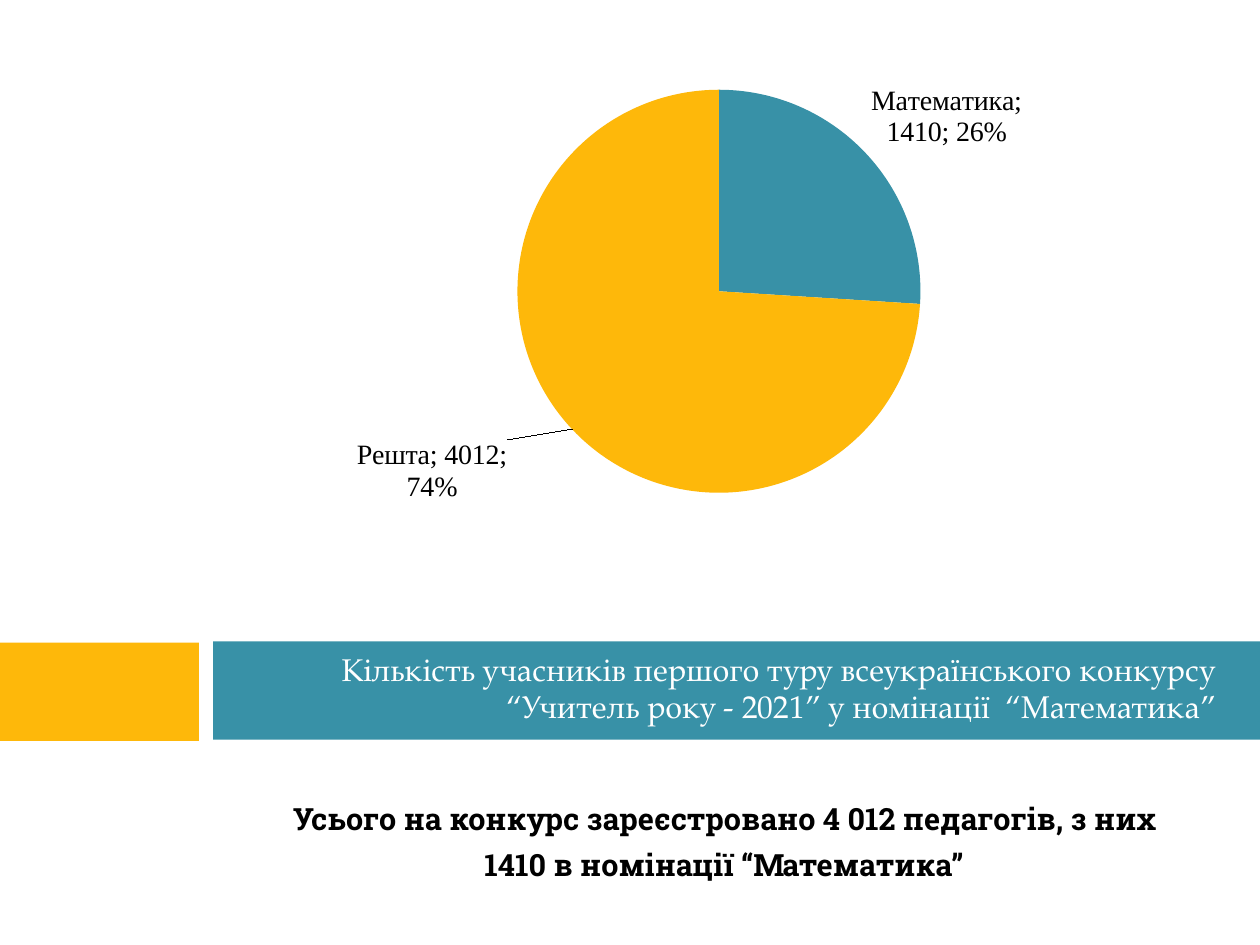
from copy import deepcopy

from pptx import Presentation
from pptx.chart.data import CategoryChartData
from pptx.dml.color import RGBColor
from pptx.enum.chart import XL_CHART_TYPE as ChartType, XL_LABEL_POSITION as LabelPos
from pptx.enum.shapes import MSO_SHAPE as Preset
from pptx.enum.text import MSO_ANCHOR as Anchor, PP_ALIGN as Align
from pptx.oxml import parse_xml
from pptx.oxml.ns import nsdecls, qn
from pptx.util import Inches, Pt

TEAL, AMBER, WHITE, BLACK = "3891A7", "FEB80A", "FFFFFF", "000000"


def rgb(value):
    return RGBColor.from_string(value)


def manual_layout(inner=False, **fractions):
    """Return a chart layout element; the fractions are of the chart size."""
    parts = '<c:layoutTarget val="inner"/>' if inner else ""
    if inner:
        parts += '<c:xMode val="edge"/><c:yMode val="edge"/>'
    parts += "".join(f'<c:{key} val="{part}"/>' for key, part in fractions.items())
    return parse_xml(f'<c:layout {nsdecls("c")}><c:manualLayout>{parts}'
                     "</c:manualLayout></c:layout>")


class SlideBuilder:
    title_font = "TeX Gyre Pagella"
    body_font = "Roboto Slab"
    chart_font = "Calibri"
    label_font = "Times New Roman"

    def __init__(self, slide):
        self.slide = slide

    def style_font(self, font, name, size, color, bold=False):
        font.name, font.size, font.bold = name, Pt(size), bold
        font.color.rgb = rgb(color)

    def band(self, left, top, width, height, color):
        band = self.slide.shapes.add_shape(
            Preset.RECTANGLE, *map(Inches, (left, top, width, height)))
        band.shadow.inherit = False
        band.fill.solid()
        band.fill.fore_color.rgb = rgb(color)
        band.line.fill.background()

    def text(self, box, lines, font, size, color, align, anchor=Anchor.TOP,
             bold=False, inset_top=0.05, gap=0):
        frame = self.slide.shapes.add_textbox(*map(Inches, box)).text_frame
        frame.word_wrap = True
        frame.vertical_anchor = anchor
        frame.margin_top = Inches(inset_top)
        frame.text = "\n".join(lines)
        for paragraph in frame.paragraphs:
            paragraph.alignment = align
            paragraph.space_after = Pt(gap)
            for run in paragraph.runs:
                self.style_font(run.font, font, size, color, bold)

    def pie(self, box, slices, plot_area, label_shifts):
        data = CategoryChartData()
        data.categories = [name for name, _, _ in slices]
        data.add_series("Series 1", [count for _, count, _ in slices])
        chart = self.slide.shapes.add_chart(
            ChartType.PIE, *map(Inches, box), data).chart
        chart.has_legend = chart.has_title = False
        self.style_font(chart.font, self.chart_font, 10, BLACK)
        chart.plots[0].vary_by_categories = True

        # Fixed place of the pie inside the chart
        area = chart.plots[0]._element.getparent()
        for old in area.findall(qn("c:layout")):
            area.remove(old)
        area.insert(0, manual_layout(inner=True, **plot_area))

        series = chart.plots[0].series[0]
        for index, (_, _, color) in enumerate(slices):
            fill = series.points[index].format.fill
            fill.solid()
            fill.fore_color.rgb = rgb(color)
        self.pie_labels(series, label_shifts)

    def pie_labels(self, series, shifts):
        labels = series.data_labels
        labels.show_value = labels.show_percentage = labels.show_category_name = True
        labels.position = LabelPos.OUTSIDE_END
        self.style_font(labels.font, self.label_font, 16, BLACK)
        group = labels._element
        group.find(qn("c:showBubbleSize")).addnext(
            parse_xml(f'<c:separator {nsdecls("c")}>; </c:separator>'))

        # Labels moved away from the pie repeat the common settings
        shared = ("txPr", "dLblPos", "showLegendKey", "showVal", "showCatName",
                  "showSerName", "showPercent", "showBubbleSize", "separator")
        for place, (index, shift) in enumerate(shifts.items()):
            label = parse_xml(f'<c:dLbl {nsdecls("c")}><c:idx val="{index}"/></c:dLbl>')
            label.append(manual_layout(**shift))
            for tag in shared:
                label.append(deepcopy(group.find(qn(f"c:{tag}"))))
            group.insert(place, label)


def main():
    deck = Presentation()
    deck.slide_width, deck.slide_height = Inches(10), Inches(7.5)
    page = SlideBuilder(deck.slides.add_slide(deck.slide_layouts[6]))

    # Colour bands with the white divider
    page.band(-0.01, 5.1, 1.6, 0.78, AMBER)
    page.band(1.69, 5.09, 8.31, 0.78, TEAL)
    page.band(1.58, 0, 0.11, 7.51, WHITE)

    # Summary below the band
    page.text((1.75, 6, 8, 1.03),
              ["Усього на конкурс зареєстровано 4 012 педагогів, з них",
               "1410 в номінації “Математика”"],
              page.body_font, 17.5, BLACK, Align.CENTER,
              bold=True, inset_top=0.35, gap=5)

    # Title on the band
    page.text((1.75, 5.08, 8, 0.75),
              ["Кількість учасників першого туру всеукраїнського конкурсу "
               "“Учитель року - 2021” у номінації  “Математика”"],
              page.title_font, 18, WHITE, Align.RIGHT, Anchor.MIDDLE)

    # Share of the mathematics nomination
    page.pie((1.85, 0.21, 7.87, 4.57),
             [("Математика", 1410, TEAL), ("Решта", 4012, AMBER)],
             plot_area=dict(x=0.27, y=0.11, w=0.44, h=0.7),
             label_shifts={1: dict(x=-0.06, y=0.01)})

    deck.save("out.pptx")


if __name__ == "__main__":
    main()
